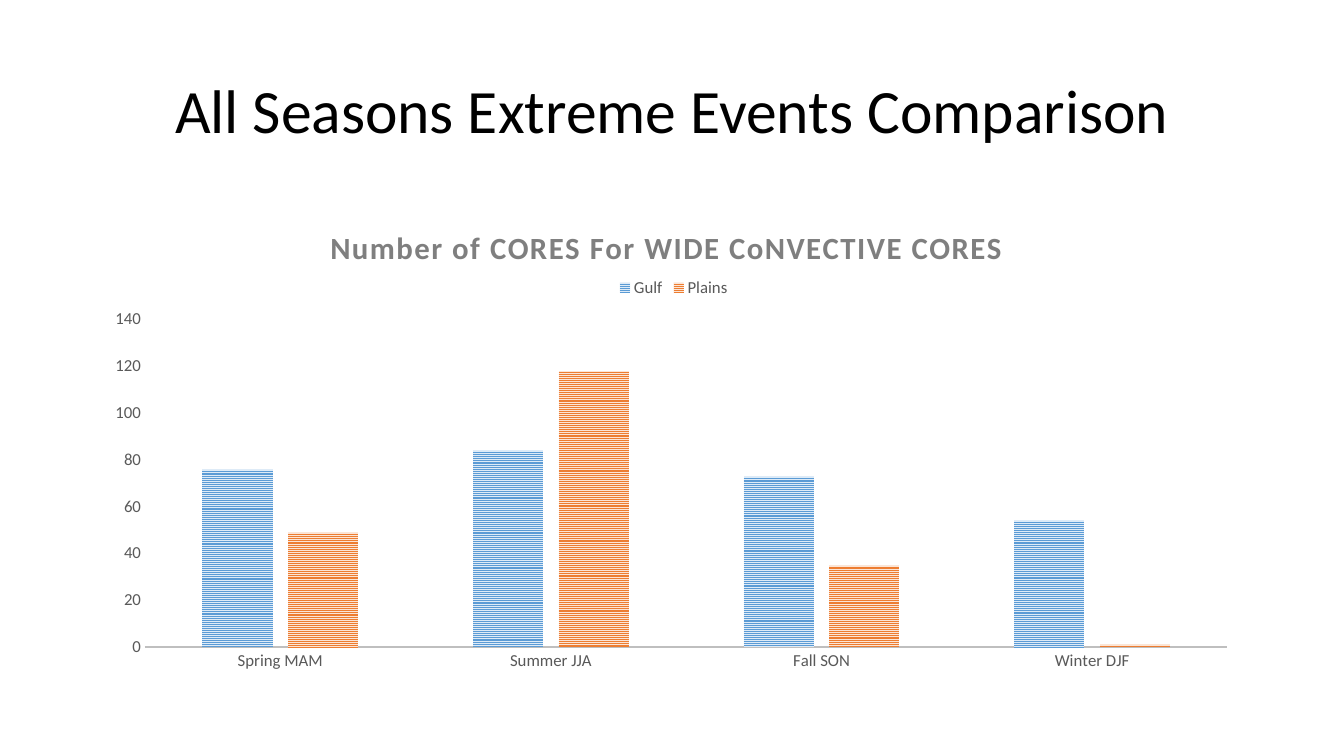
from dataclasses import dataclass

from pptx import Presentation
from pptx.chart.chart import Chart
from pptx.chart.data import CategoryChartData
from pptx.dml.color import RGBColor
from pptx.enum.chart import XL_CHART_TYPE as ChartType
from pptx.enum.chart import XL_LEGEND_POSITION as LegendPosition
from pptx.enum.chart import XL_TICK_MARK as TickMark
from pptx.enum.dml import MSO_PATTERN as Pattern
from pptx.enum.text import MSO_ANCHOR as Anchor
from pptx.enum.text import PP_ALIGN as Align
from pptx.oxml import parse_xml
from pptx.oxml.ns import nsdecls
from pptx.slide import Slide
from pptx.text.text import Font
from pptx.util import Cm, Pt

COLORS = {
    "heading": "000000",
    "chart title": "7F7F7F",
    "label": "595959",
    "axis": "BFBFBF",
    "gulf": "5B9BD5",
    "gulf pale": "DEEBF7",
    "plains": "ED7D31",
    "plains pale": "FBE5D6",
}
SEASONS = ["Spring MAM", "Summer JJA", "Fall SON", "Winter DJF"]
LEFT, WIDTH = Cm(2.34), Cm(29.21)


@dataclass(frozen=True)
class Region:
    name: str
    events: tuple[int, ...]
    stripe: str
    ground: str


@dataclass(frozen=True)
class Placement:
    area: str
    index: int
    fractions: dict[str, float]


REGIONS = [
    Region("Gulf", (76, 84, 73, 54), "gulf", "gulf pale"),
    Region("Plains", (49, 118, 35, 1), "plains", "plains pale"),
]
PLACEMENTS = [
    Placement("plotArea", 0, {"x": 0.045, "y": 0.245, "w": 0.934, "h": 0.683}),
    Placement("title", 1, {"x": 0.2, "y": 0.04}),
    Placement("legend", 1, {"x": 0.45, "y": 0.15}),
]


def color(name: str) -> RGBColor:
    return RGBColor.from_string(COLORS[name])


def format_font(font: Font, size: float, color_name: str, bold: bool = False) -> None:
    values = {"name": "Calibri", "size": Pt(size), "bold": bold}
    for attribute, value in values.items():
        setattr(font, attribute, value)
    font.color.rgb = color(color_name)


def place(chart: Chart, placement: Placement) -> None:
    owner = chart.element.xpath(f"./c:chart/c:{placement.area}")[0]
    for layout in owner.xpath("./c:layout"):
        owner.remove(layout)
    target = '<c:layoutTarget val="inner"/>' if placement.area == "plotArea" else ""
    modes = "".join(f'<c:{axis}Mode val="edge"/>' for axis in "xy")
    sizes = "".join(f'<c:{k} val="{v}"/>' for k, v in placement.fractions.items())
    owner.insert(placement.index, parse_xml(
        f"<c:layout {nsdecls('c')}><c:manualLayout>{target}{modes}{sizes}"
        "</c:manualLayout></c:layout>"
    ))


def add_heading(slide: Slide) -> None:
    frame = slide.shapes.add_textbox(LEFT, Cm(1.01), WIDTH, Cm(3.68)).text_frame
    frame.word_wrap = True
    frame.vertical_anchor = Anchor.MIDDLE
    heading = frame.paragraphs[0]
    heading.alignment = Align.CENTER
    heading.line_spacing = 0.9
    wording = heading.add_run()
    wording.text = "All Seasons Extreme Events Comparison"
    format_font(wording.font, 44, "heading")


def format_axes(chart: Chart) -> None:
    for axis in (chart.category_axis, chart.value_axis):
        ticks = {
            "major_tick_mark": TickMark.NONE,
            "minor_tick_mark": TickMark.NONE,
            "has_major_gridlines": False,
        }
        for attribute, value in ticks.items():
            setattr(axis, attribute, value)
        format_font(axis.tick_labels.font, 12, "label")
    season_line = chart.category_axis.format.line
    season_line.color.rgb = color("axis")
    season_line.width = Pt(1.5)
    count_axis = chart.value_axis
    count_axis.format.line.fill.background()
    scale = {"minimum_scale": 0, "maximum_scale": 140, "major_unit": 20}
    for attribute, value in scale.items():
        setattr(count_axis, attribute, value)


def add_events_chart(slide: Slide) -> None:
    counts = CategoryChartData()
    counts.categories = SEASONS
    for region in REGIONS:
        counts.add_series(region.name, region.events)
    chart = slide.shapes.add_chart(
        ChartType.COLUMN_CLUSTERED, LEFT, Cm(5.08), WIDTH, Cm(12.09), counts
    ).chart
    format_font(chart.font, 10, "heading")
    format_axes(chart)

    columns = chart.plots[0]
    for attribute, value in {"gap_width": 164, "overlap": -22, "vary_by_categories": False}.items():
        setattr(columns, attribute, value)
    for series, region in zip(columns.series, REGIONS):
        fill = series.format.fill
        fill.patterned()
        fill.pattern = Pattern.NARROW_HORIZONTAL
        fill.fore_color.rgb = color(region.stripe)
        fill.back_color.rgb = color(region.ground)
        series.format.line.fill.background()

    chart.has_title = True
    caption = chart.chart_title.text_frame.paragraphs[0].add_run()
    caption.text = "Number of CORES For WIDE CoNVECTIVE CORES"
    format_font(caption.font, 22, "chart title", bold=True)
    for properties in chart.element.xpath("./c:chart/c:title//a:r/a:rPr"):
        properties.set("spc", "120")

    chart.has_legend = True
    chart.legend.position = LegendPosition.TOP
    chart.legend.include_in_layout = False
    format_font(chart.legend.font, 12, "label")
    for placement in PLACEMENTS:
        place(chart, placement)


def main() -> None:
    deck = Presentation()
    deck.slide_width, deck.slide_height = Cm(33.87), Cm(19.05)
    slide = deck.slides.add_slide(deck.slide_layouts[6])
    add_heading(slide)
    add_events_chart(slide)
    deck.save("out.pptx")


if __name__ == "__main__":
    main()
